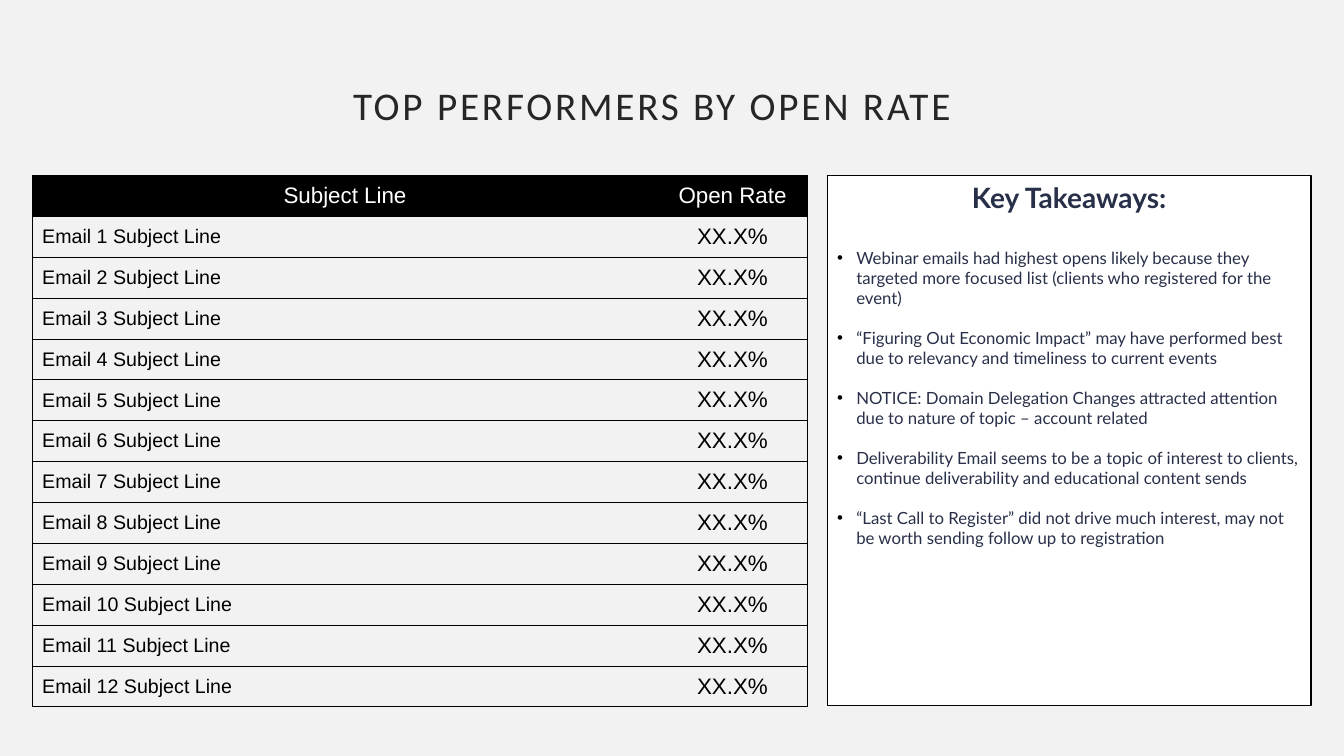
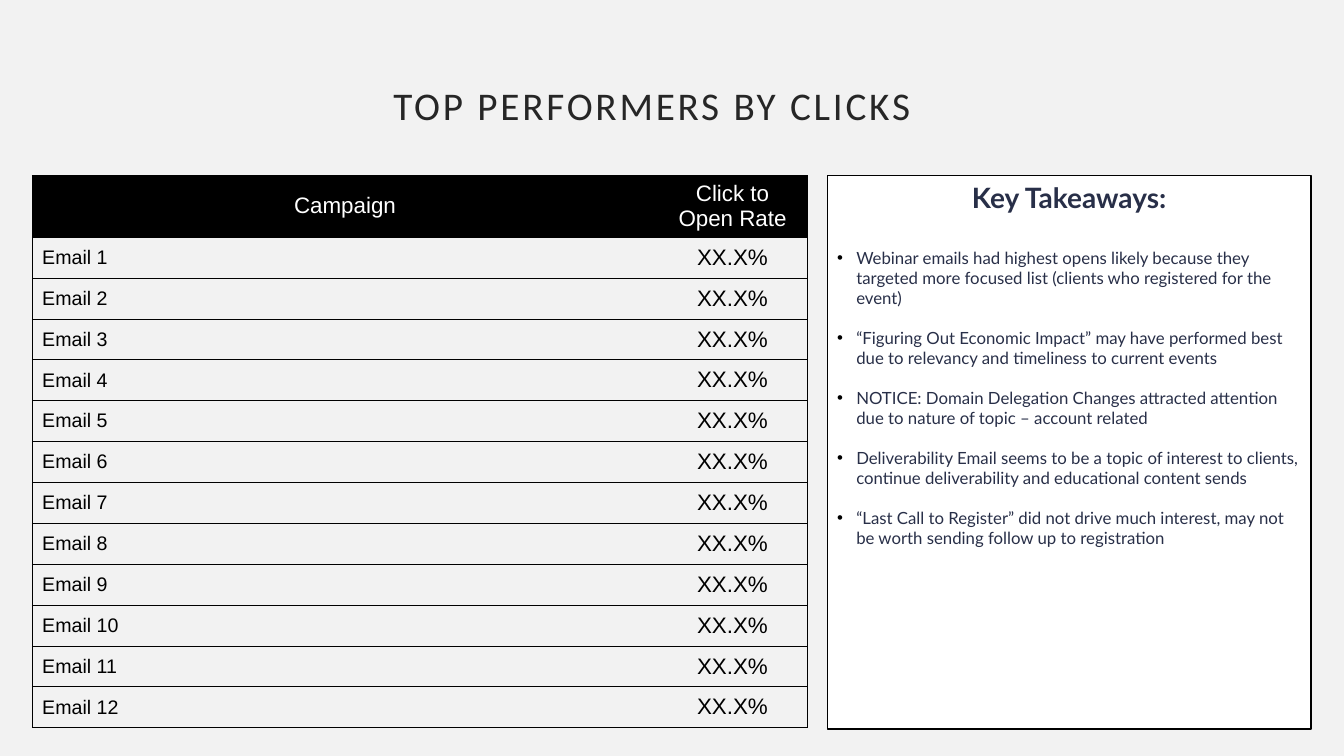
"""Builds two e-mail performance slides, each with a ranking table and key takeaways."""
from lxml import etree
from pptx import Presentation
from pptx import util as u
from pptx.dml.color import RGBColor
from pptx.enum import shapes, text
from pptx.oxml.ns import qn

COLORS = {
    "page": "F2F2F2",
    "title": "262626",
    "ink": "000000",
    "paper": "FFFFFF",
    "navy": "282F48",
}
CONTENT_TOP = u.Cm(4.42)
ROW_HEIGHT = u.Cm(1.03)
COLUMN_WIDTHS = (u.Cm(15.77), u.Cm(3.76))
EMAIL_COUNT = 12
RATE = "XX.X%"
TAKEAWAYS = (
    "Webinar emails had highest opens likely because they targeted more focused list (clients who registered for the event)",
    "“Figuring Out Economic Impact” may have performed best due to relevancy and timeliness to current events",
    "NOTICE: Domain Delegation Changes attracted attention due to nature of topic – account related",
    "Deliverability Email seems to be a topic of interest to clients, continue deliverability and educational content sends",
    "“Last Call to Register” did not drive much interest, may not be worth sending follow up to registration",
)
RANKINGS = (
    {
        "title": "TOP PERFORMERS BY OPEN RATE",
        "headings": ("Subject Line", "Open Rate"),
        "label": "Email {} Subject Line",
        "header_height": ROW_HEIGHT,
        "panel_height": u.Cm(13.36),
    },
    {
        "title": "TOP PERFORMERS BY CLICKS",
        "headings": ("Campaign", "Click to Open Rate"),
        "label": "Email {}",
        "header_height": u.Cm(1.51),
        "panel_height": u.Cm(13.95),
    },
)


def rgb(name):
    return RGBColor.from_string(COLORS[name])


def add_run(paragraph, wording, font, size, color, bold=False):
    run = paragraph.add_run()
    run.text = wording
    run.font.name = font
    run.font.size = u.Pt(size)
    run.font.bold = bold
    run.font.color.rgb = rgb(color)
    return run


def add_title(slide, wording):
    title = slide.shapes.add_textbox(0, u.Cm(1.6), u.Cm(32.87), u.Cm(1.78))
    frame = title.text_frame
    frame.word_wrap = True
    frame.vertical_anchor = text.MSO_ANCHOR.BOTTOM
    heading = frame.paragraphs[0]
    heading.alignment = text.PP_ALIGN.CENTER
    heading.line_spacing = 0.9
    run = add_run(heading, wording, "Calibri", 28, "title")
    run.font._element.set("spc", "200")


def set_borders(cell, visible_sides):
    properties = cell._tc.get_or_add_tcPr()
    for side in "LRTB":
        border = etree.SubElement(properties, qn(f"a:ln{side}"), w=str(u.Pt(0.5)))
        if side in visible_sides:
            paint = etree.SubElement(border, qn("a:solidFill"))
            etree.SubElement(paint, qn("a:srgbClr"), val=COLORS["ink"])
        else:
            etree.SubElement(border, qn("a:noFill"))


def fill_cell(cell, wording, size, column, is_header):
    set_borders(cell, "TB" + "LR"[column])
    if is_header:
        cell.fill.solid()
        cell.fill.fore_color.rgb = rgb("ink")
    else:
        cell.fill.background()
    cell.vertical_anchor = text.MSO_ANCHOR.MIDDLE
    cell.margin_top = cell.margin_bottom = u.Cm(0.1)
    paragraph = cell.text_frame.paragraphs[0]
    if is_header or column == 1:
        paragraph.alignment = text.PP_ALIGN.CENTER
    add_run(paragraph, wording, "Arial", size, "paper" if is_header else "ink")


def add_ranking(slide, headings, label, header_height):
    entries = [(label.format(number), RATE) for number in range(1, EMAIL_COUNT + 1)]
    ranking = slide.shapes.add_table(
        EMAIL_COUNT + 1, len(headings), u.Cm(0.81), CONTENT_TOP,
        sum(COLUMN_WIDTHS), header_height + EMAIL_COUNT * ROW_HEIGHT,
    ).table
    ranking.horz_banding = False
    for column, width in zip(ranking.columns, COLUMN_WIDTHS):
        column.width = width
    for row_index, entry in enumerate([headings] + entries):
        is_header = row_index == 0
        ranking.rows[row_index].height = header_height if is_header else ROW_HEIGHT
        for column_index, wording in enumerate(entry):
            size = 16 if is_header or column_index == 1 else 14
            fill_cell(ranking.cell(row_index, column_index), wording, size,
                      column_index, is_header)


def add_bullet(paragraph):
    properties = paragraph._p.get_or_add_pPr()
    indent = u.Cm(0.48)
    properties.set("marL", str(indent))
    properties.set("indent", str(-indent))
    bullet_color = etree.SubElement(properties, qn("a:buClr"))
    etree.SubElement(bullet_color, qn("a:srgbClr"), val=COLORS["ink"])
    etree.SubElement(properties, qn("a:buFont"), typeface="Arial")
    etree.SubElement(properties, qn("a:buChar"), char="•")


def add_takeaways(slide, height):
    panel = slide.shapes.add_shape(
        shapes.MSO_SHAPE.RECTANGLE, u.Cm(20.85), CONTENT_TOP, u.Cm(12.19), height)
    panel.shadow.inherit = False
    panel.fill.solid()
    panel.fill.fore_color.rgb = rgb("paper")
    panel.line.color.rgb = rgb("ink")
    panel.line.width = u.Pt(1)
    frame = panel.text_frame
    frame.word_wrap = True
    frame.vertical_anchor = text.MSO_ANCHOR.TOP
    heading = frame.paragraphs[0]
    heading.alignment = text.PP_ALIGN.CENTER
    heading.space_after = u.Pt(10)
    add_run(heading, "Key Takeaways:", "Lato", 20, "navy", bold=True)
    for wording in TAKEAWAYS:
        takeaway = frame.add_paragraph()
        takeaway.alignment = text.PP_ALIGN.LEFT
        takeaway.space_before = u.Pt(14)
        add_bullet(takeaway)
        add_run(takeaway, wording, "Lato", 12, "navy")


def main():
    deck = Presentation()
    deck.slide_width, deck.slide_height = u.Cm(33.87), u.Cm(19.05)
    backdrop = deck.slide_master.background.fill
    backdrop.solid()
    backdrop.fore_color.rgb = rgb("page")
    for ranking in RANKINGS:
        slide = deck.slides.add_slide(deck.slide_layouts[6])
        add_takeaways(slide, ranking["panel_height"])
        add_ranking(slide, ranking["headings"], ranking["label"], ranking["header_height"])
        add_title(slide, ranking["title"])
    deck.save("out.pptx")


if __name__ == "__main__":
    main()
